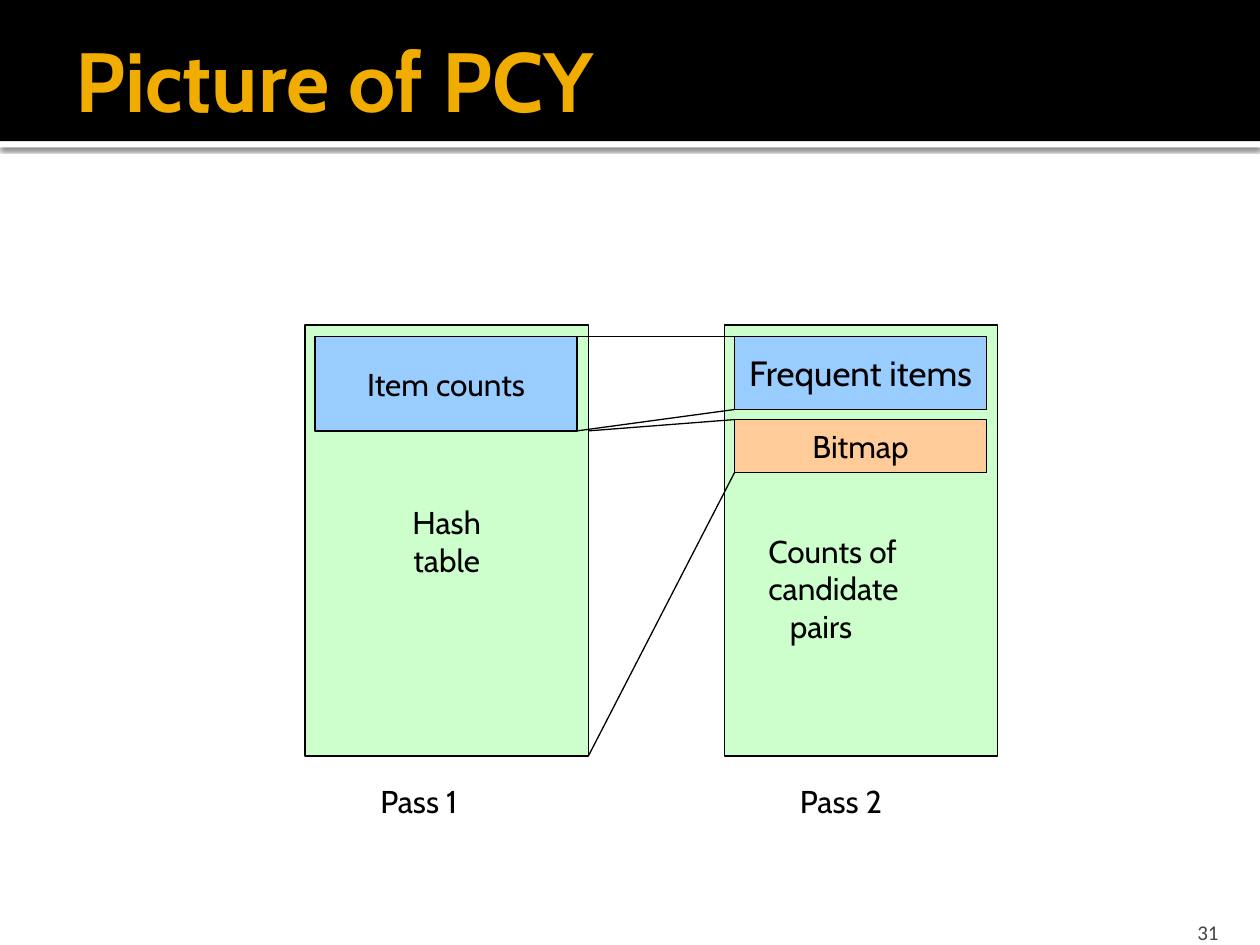
import dataclasses
import typing

import pptx
import pptx.dml.color
import pptx.enum.shapes
import pptx.enum.text
import pptx.oxml
import pptx.oxml.ns
import pptx.util

Inches = pptx.util.Inches
Pt = pptx.util.Pt
Align = pptx.enum.text.PP_ALIGN
Anchor = pptx.enum.text.MSO_ANCHOR
Kind = pptx.enum.shapes.MSO_SHAPE

BLACK, WHITE, GOLD, GRAY = "000000", "FFFFFF", "F0AD00", "454545"
GREEN, BLUE, PEACH = "CCFFCC", "99CCFF", "FFCC99"
A_NS = pptx.oxml.ns.nsdecls("a")


@dataclasses.dataclass
class Box:
    left: float
    top: float
    width: float
    height: float
    fill: str
    lines: tuple[str, ...] = ()
    size: int = 18
    edge: bool = True

    @property
    def right(self) -> float:
        return self.left + self.width

    @property
    def base(self) -> float:
        return self.top + self.height


@dataclasses.dataclass
class Label:
    left: float
    top: float
    width: float
    height: float
    lines: tuple[str, ...]
    size: int = 18
    font: str = "Cabin"
    color: str = BLACK
    align: typing.Any = Align.LEFT


def rgb(color: str) -> pptx.dml.color.RGBColor:
    return pptx.dml.color.RGBColor.from_string(color)


def place(item: Box | Label) -> list[int]:
    return [Inches(n) for n in (item.left, item.top, item.width, item.height)]


def write(frame, lines: tuple[str, ...], size: int, color: str = BLACK,
          font: str = "Cabin", align=Align.LEFT, bold: bool = False) -> None:
    for i, line in enumerate(lines):
        para = frame.add_paragraph() if i else frame.paragraphs[0]
        para.alignment = align
        run = para.add_run()
        run.text = line
        run.font.size = Pt(size)
        run.font.name = font
        run.font.bold = bold
        run.font.color.rgb = rgb(color)


def draw_box(slide, box: Box):
    shape = slide.shapes.add_shape(Kind.RECTANGLE, *place(box))
    shape.shadow.inherit = False
    shape.fill.solid()
    shape.fill.fore_color.rgb = rgb(box.fill)
    if box.edge:
        shape.line.color.rgb = rgb(BLACK)
        shape.line.width = Pt(0.75)
    else:
        shape.line.fill.background()
    frame = shape.text_frame
    frame.word_wrap = False
    frame.vertical_anchor = Anchor.MIDDLE
    write(frame, box.lines, box.size, align=Align.CENTER)
    return shape


def draw_label(slide, label: Label):
    frame = slide.shapes.add_textbox(*place(label)).text_frame
    frame.word_wrap = True
    write(frame, label.lines, label.size, label.color, label.font, label.align)
    return frame


def draw_line(slide, x1: float, y1: float, x2: float, y2: float) -> None:
    line = slide.shapes.add_connector(
        pptx.enum.shapes.MSO_CONNECTOR.STRAIGHT,
        Inches(x1), Inches(y1), Inches(x2), Inches(y2))
    line.line.color.rgb = rgb(BLACK)
    line.line.width = Pt(0.75)
    line._element.spPr.append(pptx.oxml.parse_xml(f"<a:effectLst {A_NS}/>"))


def cast_shadow(shape) -> None:
    effects = shape._element.spPr.find(pptx.oxml.ns.qn("a:effectLst"))
    effects.append(pptx.oxml.parse_xml(
        f'<a:outerShdw {A_NS} blurRad="{Pt(2.5)}" dist="{Pt(0.8)}" '
        'dir="5400000" algn="tl" rotWithShape="0"><a:srgbClr val="000000">'
        '<a:alpha val="60000"/></a:srgbClr></a:outerShdw>'))


def main() -> None:
    deck = pptx.Presentation()
    deck.slide_width, deck.slide_height = Inches(10), Inches(7.5)
    slide = deck.slides.add_slide(deck.slide_layouts[5])

    # Header band
    cast_shadow(draw_box(slide, Box(0, 1.12, 10, 0.05, WHITE, edge=False)))
    draw_box(slide, Box(0, 0, 10, 1.12, BLACK, edge=False))

    # Title, brought in front of the band
    title = slide.shapes.title
    title.left, title.top = Inches(0.5), Inches(0.17)
    title.width, title.height = Inches(9.5), Inches(0.92)
    frame = title.text_frame
    frame.auto_size = pptx.enum.text.MSO_AUTO_SIZE.NONE
    frame.vertical_anchor = Anchor.MIDDLE
    frame.margin_right = Inches(0.05)
    write(frame, ("Picture of PCY",), 48, GOLD, bold=True)
    slide.shapes._spTree.append(title._element)

    # Memory of each pass
    first = Box(2.42, 2.58, 2.25, 3.42, GREEN, ("Hash", "table"))
    second = Box(5.75, 2.58, 2.17, 3.42, GREEN)
    counts = Box(2.5, 2.67, 2.08, 0.75, BLUE, ("Item counts",))
    items = Box(5.83, 2.67, 2, 0.58, BLUE, ("Frequent items",), 20)
    bits = Box(5.83, 3.33, 2, 0.42, PEACH, ("Bitmap",))
    for box in (first, second, counts, bits, items):
        draw_box(slide, box)

    # Lines from each part to what it becomes
    draw_line(slide, counts.right, counts.top, items.left, items.top)
    draw_line(slide, counts.right, counts.base, items.left, items.base)
    draw_line(slide, first.right, counts.base, bits.left, bits.top)
    draw_line(slide, first.right, first.base, bits.left, bits.base)

    # Labels
    for left, name in ((2.92, "Pass 1"), (6.25, "Pass 2")):
        draw_label(slide, Label(left, 6.16, 1.15, 0.5, (name,)))
    pairs = draw_label(slide, Label(
        6, 4.17, 1.62, 1.3, ("Counts of", "candidate", "pairs")))
    last = pairs.paragraphs[-1]._p.get_or_add_pPr()
    last.set("marL", str(Inches(0.17)))

    # Page number
    page = draw_label(slide, Label(
        8.97, 7.2, 0.8, 0.3, ("31",), 12, "Calibri", GRAY, Align.RIGHT))
    page.vertical_anchor = Anchor.BOTTOM
    page.margin_bottom = 0

    deck.save("out.pptx")


if __name__ == "__main__":
    main()
